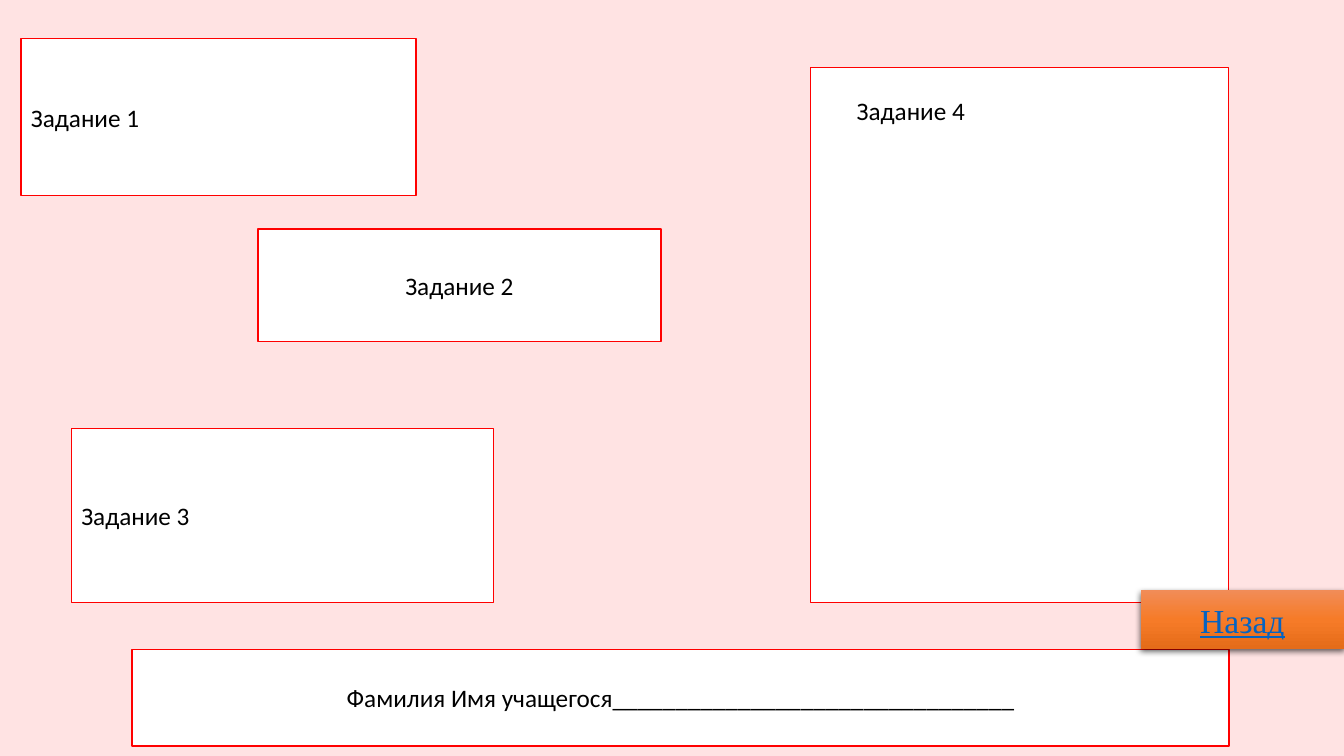
from copy import deepcopy
from dataclasses import dataclass

from lxml import etree
from pptx import Presentation
from pptx.dml.color import RGBColor
from pptx.enum.shapes import MSO_SHAPE
from pptx.enum.text import MSO_ANCHOR, MSO_AUTO_SIZE, PP_ALIGN
from pptx.oxml.ns import qn
from pptx.shapes.autoshape import Shape
from pptx.slide import Slide
from pptx.util import Cm, Pt

RECT = MSO_SHAPE.RECTANGLE
LEFT, CENTER = PP_ALIGN.LEFT, PP_ALIGN.CENTER
MIDDLE, TOP = MSO_ANCHOR.MIDDLE, MSO_ANCHOR.TOP
GROW = MSO_AUTO_SIZE.SHAPE_TO_FIT_TEXT

COLORS = {
    "back": "FFE3E3",
    "paper": "FFFFFF",
    "border": "FF0000",
    "text": "000000",
    "link": "0563C1",
    "light": "F18C57",
    "mid": "F67B28",
    "dark": "E56C19",
    "shadow": "000000",
}
BODY = {"name": "Calibri", "size": Pt(18)}
LINK = {"name": "Times New Roman", "size": Pt(24), "underline": True}


@dataclass
class Box:
    left: float
    top: float
    width: float
    height: float
    text: str = ""
    align: PP_ALIGN = LEFT

    def place(self) -> list[Cm]:
        return [Cm(n) for n in (self.left, self.top, self.width, self.height)]


BOXES = [
    Box(0.53, 0.97, 9.96, 3.96, "Задание 1"),
    Box(6.5, 5.77, 10.16, 2.84, "Задание 2", CENTER),
    Box(1.8, 10.8, 10.64, 4.39, "Задание 3"),
    Box(20.42, 1.7, 10.54, 13.49),
    Box(3.33, 16.36, 27.64, 2.44, "Фамилия Имя учащегося" + "_" * 32, CENTER),
]
LABEL = Box(21.34, 2.29, 5.97, 1.02, "Задание 4")
BUTTON = Box(28.75, 14.88, 5.12, 1.47, "Назад", CENTER)


def color(key: str) -> RGBColor:
    return RGBColor.from_string(COLORS[key])


def write(shape: Shape, box: Box, style: dict, ink: str, anchor: MSO_ANCHOR) -> None:
    frame = shape.text_frame
    frame.word_wrap = True
    frame.vertical_anchor = anchor
    line = frame.paragraphs[0]
    line.alignment = box.align
    run = line.add_run()
    run.text = box.text
    for name, value in style.items():
        setattr(run.font, name, value)
    run.font.color.rgb = color(ink)


def add_rect(slide: Slide, box: Box) -> Shape:
    shape = slide.shapes.add_shape(RECT, *box.place())
    shape.shadow.inherit = False
    return shape


def add_task(slide: Slide, box: Box) -> None:
    shape = add_rect(slide, box)
    shape.fill.solid()
    shape.fill.fore_color.rgb = color("paper")
    shape.line.color.rgb = color("border")
    shape.line.width = Pt(1)
    if box.text:
        write(shape, box, BODY, "text", MIDDLE)


def add_label(slide: Slide, box: Box) -> None:
    shape = slide.shapes.add_textbox(*box.place())
    write(shape, box, BODY, "text", TOP)
    shape.text_frame.auto_size = GROW


def shade(shape: Shape) -> None:
    """Fill from top to bottom with three colour stops."""
    fill = shape.fill
    fill.gradient()
    fill.gradient_angle = 270
    first = shape._element.spPr.find(".//" + qn("a:gs"))
    first.addnext(deepcopy(first))
    for stop, key, pos in zip(fill.gradient_stops, ("light", "mid", "dark"), (0, 0.5, 1)):
        stop.color.rgb = color(key)
        stop.position = pos


def cast(shape: Shape) -> None:
    """Add a soft shadow below the shape."""
    effects = shape._element.spPr.find(qn("a:effectLst"))
    outer = etree.SubElement(
        effects, qn("a:outerShdw"), blurRad=str(Pt(4.5)), dist=str(Pt(1.5)),
        dir="5400000", algn="ctr", rotWithShape="0")
    tint = etree.SubElement(outer, qn("a:srgbClr"), val=COLORS["shadow"])
    etree.SubElement(tint, qn("a:alpha"), val="63000")


def add_button(slide: Slide, box: Box) -> None:
    shape = add_rect(slide, box)
    shade(shape)
    cast(shape)
    shape.line.fill.background()
    write(shape, box, LINK, "link", MIDDLE)


def main() -> None:
    deck = Presentation()
    deck.slide_width, deck.slide_height = Cm(33.87), Cm(19.05)
    slide = deck.slides.add_slide(deck.slide_layouts[6])
    back = slide.background.fill
    back.solid()
    back.fore_color.rgb = color("back")
    for box in BOXES:
        add_task(slide, box)
    add_label(slide, LABEL)
    add_button(slide, BUTTON)
    deck.save("out.pptx")


if __name__ == "__main__":
    main()
